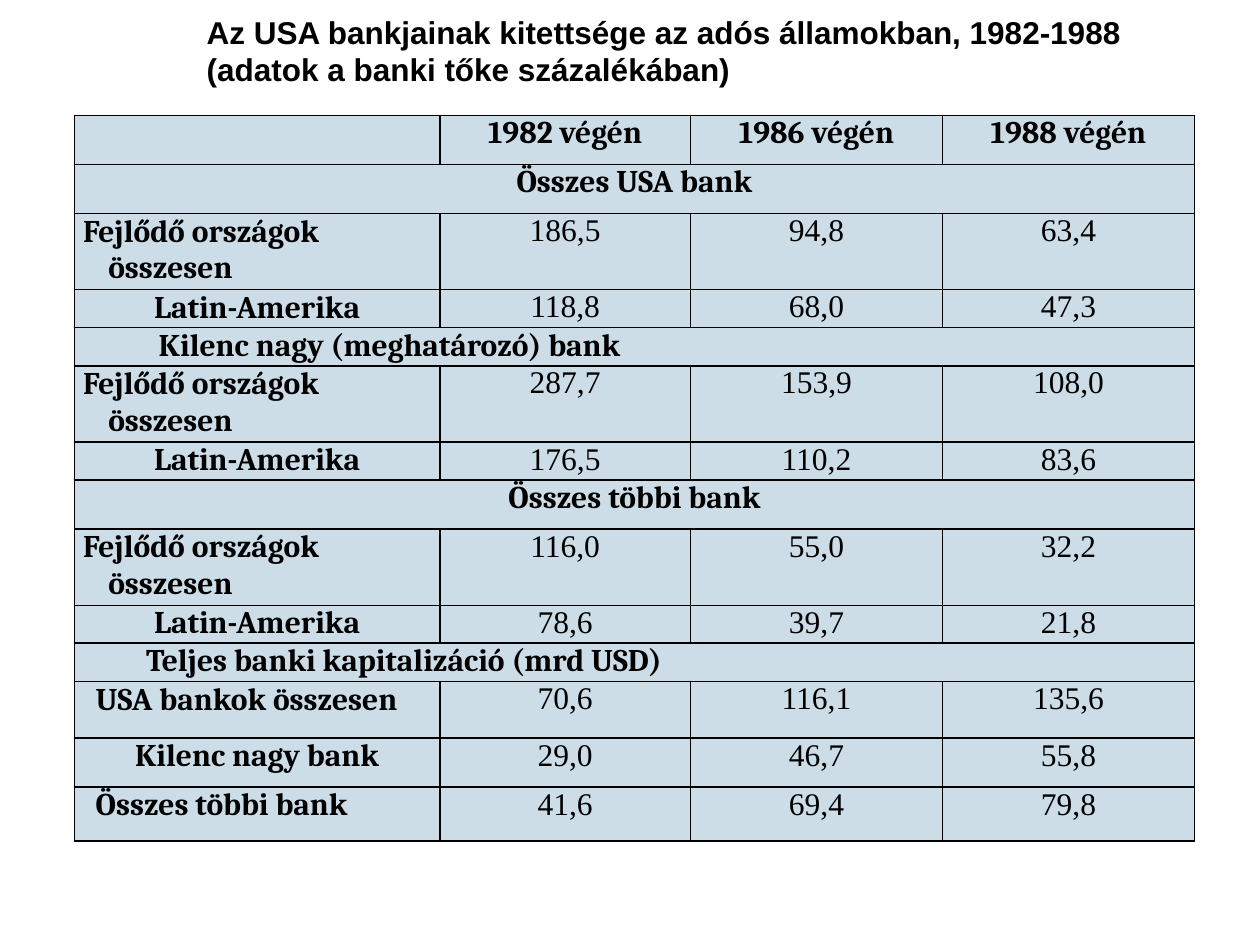
"""Builds the slide on the exposure of US banks to debtor states, 1982-1988."""
import pptx
import pptx.dml.color
import pptx.enum.text
import pptx.oxml
import pptx.oxml.ns
import pptx.util

Pt = pptx.util.Pt
ALIGN = pptx.enum.text.PP_ALIGN
BLACK = pptx.dml.color.RGBColor(0x00, 0x00, 0x00)
PALE_BLUE = pptx.dml.color.RGBColor(0xCC, 0xDD, 0xE7)

TITLE = "Az USA bankjainak kitettsége az adós államokban, 1982-1988 (adatok a banki tőke százalékában)"
COLUMN_WIDTHS = (208.8, 143.3, 144, 144)
CENTERED = None
HANGING = (19.4, -14.4)
DEVELOPING = "Fejlődő országok összesen"
LATIN = "Latin-Amerika"
ROWS = (
    (28, CENTERED, ("", "1982 végén", "1986 végén", "1988 végén")),
    (28, CENTERED, ("Összes USA bank",)),
    (41.8, HANGING, (DEVELOPING, "186,5", "94,8", "63,4")),
    (18, CENTERED, (LATIN, "118,8", "68,0", "47,3")),
    (18, (48.2, 0), ("Kilenc nagy (meghatározó) bank",)),
    (41.8, HANGING, (DEVELOPING, "287,7", "153,9", "108,0")),
    (18, CENTERED, (LATIN, "176,5", "110,2", "83,6")),
    (28, CENTERED, ("Összes többi bank",)),
    (41.8, HANGING, (DEVELOPING, "116,0", "55,0", "32,2")),
    (18, CENTERED, (LATIN, "78,6", "39,7", "21,8")),
    (18, (41, 0), ("Teljes banki kapitalizáció (mrd USD)",)),
    (32.4, (19.4, -7.2), ("USA bankok összesen", "70,6", "116,1", "135,6")),
    (28, CENTERED, ("Kilenc nagy bank", "29,0", "46,7", "55,8")),
    (31, (25.2, -13), ("Összes többi bank", "41,6", "69,4", "79,8")),
)


class SlideBuilder:
    """Holds the text and table style together with the current slide."""

    size = Pt(18)
    title_font = "Arial"
    label_font = "Cambria"
    value_font = "Times New Roman"
    border_width = Pt(1)

    def __init__(self, presentation):
        """Adds a title-only slide."""
        self.slide = presentation.slides.add_slide(presentation.slide_layouts[5])

    def run(self, paragraph, text, font_name, bold):
        """Adds one styled run."""
        run = paragraph.add_run()
        run.text = text
        run.font.name = font_name
        run.font.size = self.size
        run.font.bold = bold
        run.font.color.rgb = BLACK

    def title(self, text, left, top, width, height):
        """Places and fills the title placeholder."""
        shape = self.slide.shapes.title
        shape.left, shape.top = Pt(left), Pt(top)
        shape.width, shape.height = Pt(width), Pt(height)
        frame = shape.text_frame
        frame.word_wrap = True
        frame.auto_size = pptx.enum.text.MSO_AUTO_SIZE.SHAPE_TO_FIT_TEXT
        frame.vertical_anchor = pptx.enum.text.MSO_ANCHOR.TOP
        paragraph = frame.paragraphs[0]
        paragraph.alignment = ALIGN.LEFT
        self.run(paragraph, text, self.title_font, True)

    def cell_style(self, cell):
        """Sets margins, borders and fill of a cell."""
        cell.margin_left = cell.margin_right = cell.margin_top = cell.margin_bottom = 0
        properties = cell._tc.get_or_add_tcPr()
        for side in ("lnL", "lnR", "lnT", "lnB"):
            properties.append(pptx.oxml.parse_xml(
                f'<a:{side} {pptx.oxml.ns.nsdecls("a")} w="{self.border_width}">'
                f'<a:solidFill><a:srgbClr val="{BLACK}"/></a:solidFill></a:{side}>'))
        cell.fill.solid()
        cell.fill.fore_color.rgb = PALE_BLUE

    def cell_text(self, cell, text, indent, is_label):
        """Writes a cell, centred unless an indent is given."""
        paragraph = cell.text_frame.paragraphs[0]
        if indent is CENTERED:
            paragraph.alignment = ALIGN.CENTER
        else:
            paragraph.alignment = ALIGN.LEFT
            paragraph.line_spacing = 1.01
            properties = paragraph._p.get_or_add_pPr()
            properties.set("marL", str(Pt(indent[0])))
            properties.set("indent", str(Pt(indent[1])))
        self.run(paragraph, text, self.label_font if is_label else self.value_font, is_label)

    def table(self, rows, widths, left, top):
        """Adds the table; a row with one text spans all columns."""
        height = sum(row[0] for row in rows)
        table = self.slide.shapes.add_table(
            len(rows), len(widths), Pt(left), Pt(top), Pt(sum(widths)), Pt(height)).table
        table.first_row = table.horz_banding = False
        for column, width in zip(table.columns, widths):
            column.width = Pt(width)
        for row_index, (row_height, indent, texts) in enumerate(rows):
            table.rows[row_index].height = Pt(row_height)
            for cell in table.rows[row_index].cells:
                self.cell_style(cell)
            if len(texts) == 1:
                table.cell(row_index, 0).merge(table.cell(row_index, len(widths) - 1))
            for column_index, text in enumerate(texts):
                if text:
                    is_label = row_index == 0 or column_index == 0
                    self.cell_text(table.cell(row_index, column_index), text,
                                   indent if column_index == 0 else CENTERED, is_label)


def main():
    """Creates and saves the presentation."""
    presentation = pptx.Presentation()
    presentation.slide_width, presentation.slide_height = Pt(720), Pt(540)
    builder = SlideBuilder(presentation)
    builder.title(TITLE, 110.9, 3.6, 550, 51)
    builder.table(ROWS, COLUMN_WIDTHS, 42.5, 66)
    presentation.save("out.pptx")


if __name__ == "__main__":
    main()
